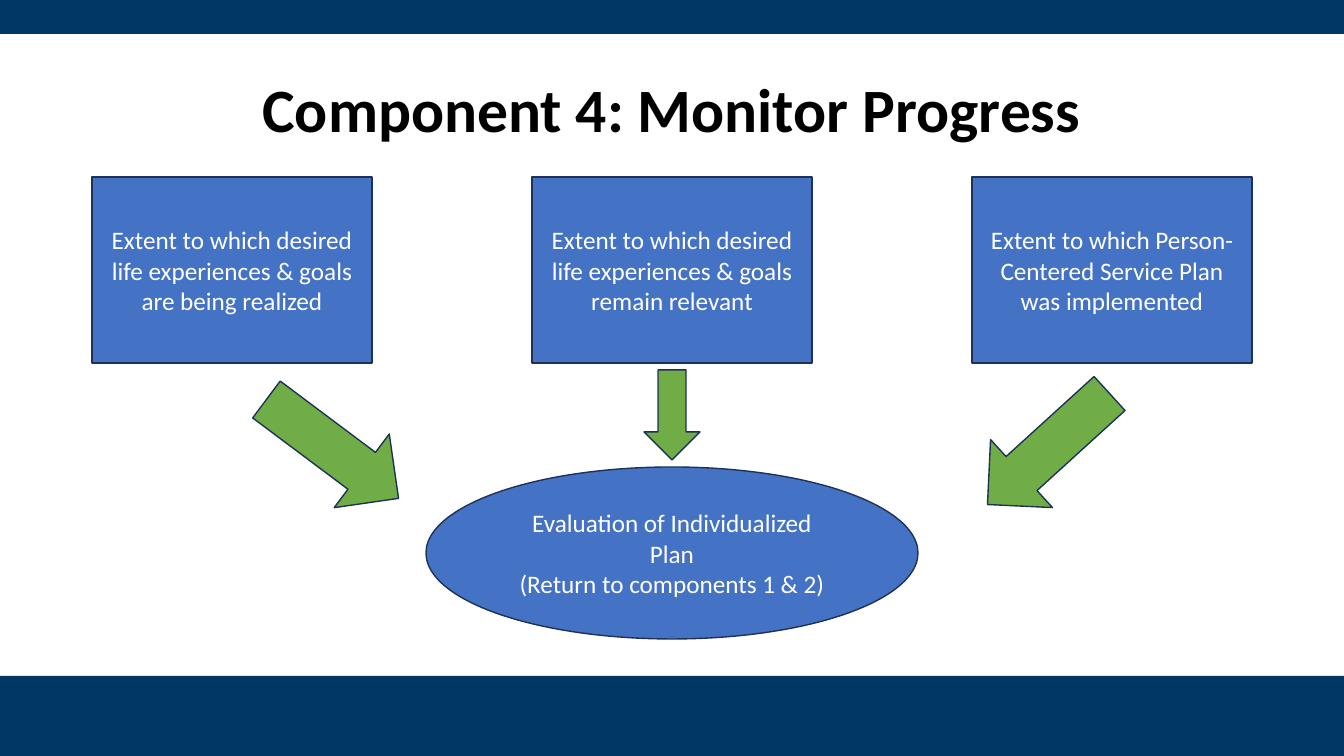
from pptx import Presentation
from pptx import util as u
from pptx.dml.color import RGBColor
from pptx.enum import shapes, text

NAVY = RGBColor(0x00, 0x38, 0x65)
BLUE = RGBColor(0x44, 0x72, 0xC4)
GREEN = RGBColor(0x70, 0xAD, 0x47)
OUTLINE = RGBColor(0x1E, 0x32, 0x56)
WHITE = RGBColor(0xFF, 0xFF, 0xFF)
BLACK = RGBColor(0x00, 0x00, 0x00)

SHAPE = shapes.MSO_SHAPE
WIDTH, HEIGHT = 1344, 756


def px(n):
    return u.Inches(n / 100.8)


def add_box(kind, box, fill, outline=None, lines=()):
    """Add a filled preset shape with one centred paragraph per line."""
    sp = s.shapes.add_shape(kind, *map(px, box))
    sp.shadow.inherit = False
    sp.fill.solid()
    sp.fill.fore_color.rgb = fill
    if outline is None:
        sp.line.fill.background()
    else:
        sp.line.color.rgb = outline
        sp.line.width = u.Pt(1)
    tf = sp.text_frame
    tf.vertical_anchor = text.MSO_ANCHOR.MIDDLE
    for i, line in enumerate(lines):
        p = tf.add_paragraph() if i else tf.paragraphs[0]
        p.text = line
        p.alignment = text.PP_ALIGN.CENTER
        p.font.name = "Calibri"
        p.font.size = u.Pt(18)
        p.font.color.rgb = WHITE
    return sp


prs = Presentation()
prs.slide_width, prs.slide_height = px(WIDTH), px(HEIGHT)
s = prs.slides.add_slide(prs.slide_layouts[5])

# Bands at the bottom and top
for top, height in ((676, 80), (0, 34)):
    add_box(SHAPE.RECTANGLE, (0, top, WIDTH, height), NAVY)

# Title
title = s.shapes.title
title.left, title.top, title.width, title.height = map(px, (92, 40, 1160, 146))
tf = title.text_frame
tf.text = "Component 4: Monitor Progress"
tf.auto_size = text.MSO_AUTO_SIZE.NONE
tf.vertical_anchor = text.MSO_ANCHOR.MIDDLE
p = tf.paragraphs[0]
p.alignment = text.PP_ALIGN.CENTER
p.line_spacing = 0.9
p.font.name = "Calibri"
p.font.size = u.Pt(44)
p.font.bold = True
p.font.color.rgb = BLACK

# Evaluation that the three questions lead to
add_box(SHAPE.OVAL, (426, 467, 492, 172), BLUE, OUTLINE,
        ("Evaluation of Individualized Plan", "(Return to components 1 & 2)"))

# Three monitoring questions
questions = (
    "Extent to which desired life experiences & goals are being realized",
    "Extent to which desired life experiences & goals remain relevant",
    "Extent to which Person-Centered Service Plan was implemented",
)
for i, question in enumerate(questions):
    add_box(SHAPE.RECTANGLE, (92 + 440 * i, 177, 280, 186), BLUE, OUTLINE, (question,))

# Arrows towards the evaluation
arrows = (
    ((250, 403, 165, 92), 36.8),
    ((966, 403, 165, 92), 137.7),
    ((627, 387, 90, 56), 90),
)
for box, angle in arrows:
    add_box(SHAPE.RIGHT_ARROW, box, GREEN, OUTLINE).rotation = angle

prs.save("out.pptx")
